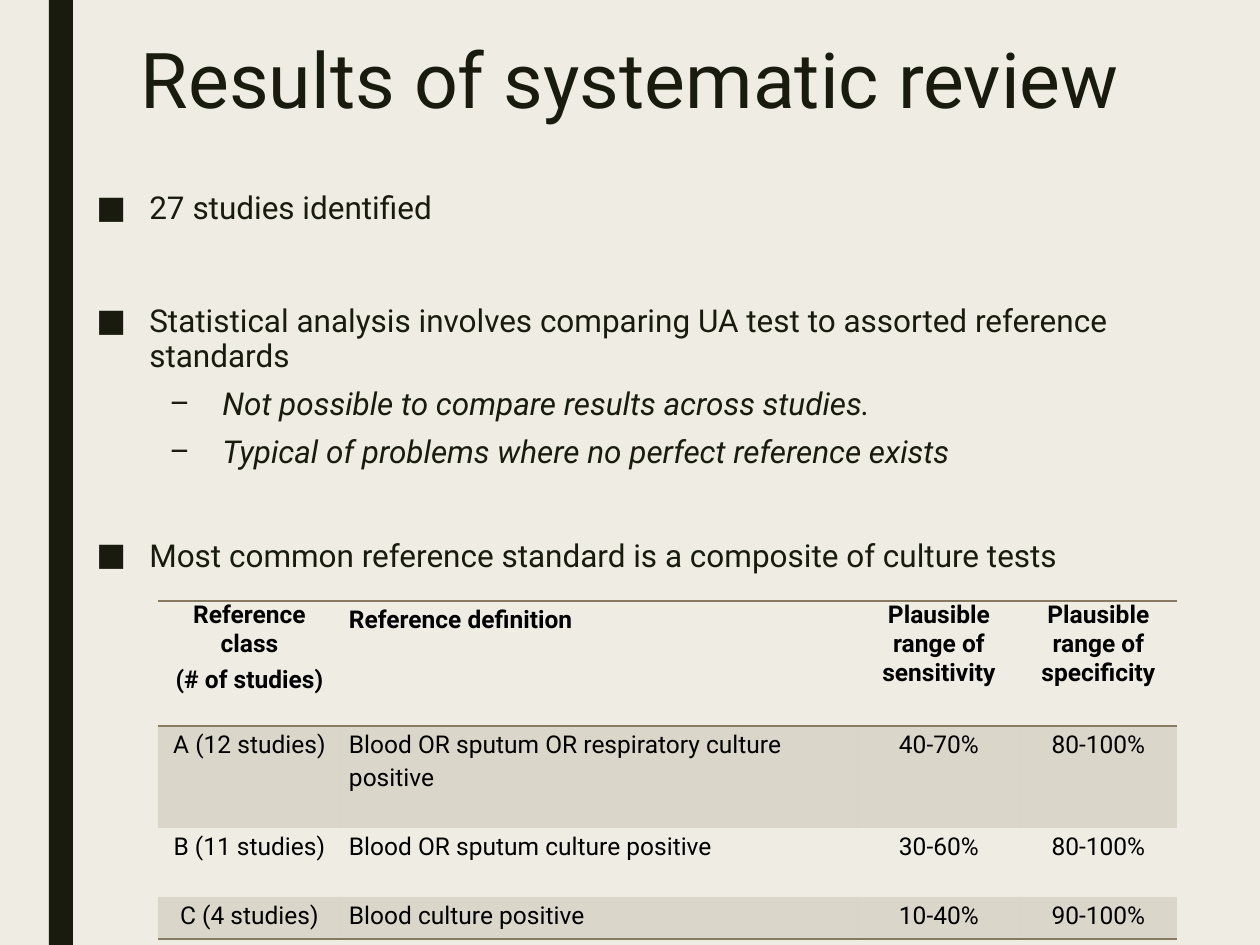
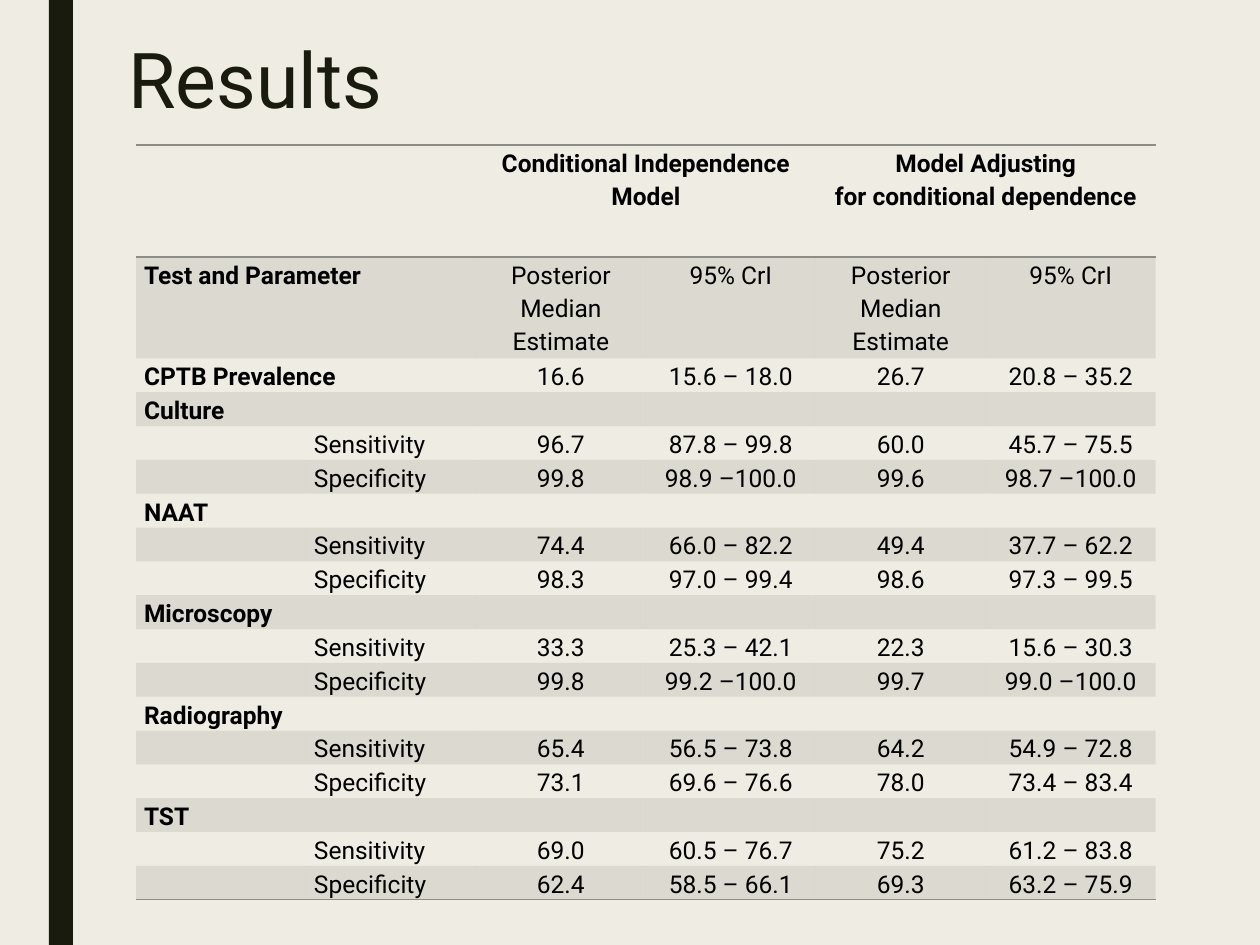
"""Build two slides on the results of a systematic review of diagnostic tests."""
from lxml import etree
from pptx import Presentation
from pptx import util as u
from pptx.dml.color import RGBColor
from pptx.enum import shapes, text
from pptx.oxml.ns import qn

PX = 914400 / 126
FONT = "Roboto"
COLORS = {
    "paper": "EFEDE3",
    "ink": "191B0E",
    "black": "000000",
    "tan": "897B61",
    "grey": "8C8D86",
}
PLAIN_TABLE = "{2D5ABB26-0587-4C30-8999-92F81FD0307C}"
LEFT, CENTER = text.PP_ALIGN.LEFT, text.PP_ALIGN.CENTER
TOP, MIDDLE = text.MSO_ANCHOR.TOP, text.MSO_ANCHOR.MIDDLE

FINDINGS = [
    ("27 studies identified", 0, 10),
    ("Statistical analysis involves comparing UA test to assorted reference standards", 0, 42),
    ("Not possible to compare results across studies.", 1, 5),
    ("Typical of problems where no perfect reference exists", 1, 5),
    ("Most common reference standard is a composite of culture tests", 0, 37),
]
REFERENCE_HEADS = [
    ["Reference class", "(# of studies)"],
    ["Reference definition"],
    ["Plausible range of sensitivity"],
    ["Plausible range of specificity"],
]
REFERENCE_CLASSES = [
    ("A (12 studies)", "Blood OR sputum OR respiratory culture positive", "40-70%", "80-100%"),
    ("B (11 studies)", "Blood OR sputum culture positive", "30-60%", "80-100%"),
    ("C (4 studies)", "Blood culture positive", "10-40%", "90-100%"),
]
MODELS = ["Conditional Independence Model", "Model Adjusting\vfor conditional dependence"]
MEASURES = ["Posterior Median Estimate", "95% CrI"]
PREVALENCE = ("16.6", "15.6 – 18.0", "26.7", "20.8 – 35.2")
ACCURACY = {
    "Culture": [("96.7", "87.8 – 99.8", "60.0", "45.7 – 75.5"),
                ("99.8", "98.9 –100.0", "99.6", "98.7 –100.0")],
    "NAAT": [("74.4", "66.0 – 82.2", "49.4", "37.7 – 62.2"),
             ("98.3", "97.0 – 99.4", "98.6", "97.3 – 99.5")],
    "Microscopy": [("33.3", "25.3 – 42.1", "22.3", "15.6 – 30.3"),
                   ("99.8", "99.2 –100.0", "99.7", "99.0 –100.0")],
    "Radiography": [("65.4", "56.5 – 73.8", "64.2", "54.9 – 72.8"),
                    ("73.1", "69.6 – 76.6", "78.0", "73.4 – 83.4")],
    "TST": [("69.0", "60.5 – 76.7", "75.2", "61.2 – 83.8"),
            ("62.4", "58.5 – 66.1", "69.3", "63.2 – 75.9")],
}


def px(length):
    """Turn px into EMU."""
    return u.Emu(round(length * PX))


def rgb(name):
    """Return the named colour."""
    return RGBColor.from_string(COLORS[name])


def write(frame, content, size=14, color="black", bold=False, italic=False,
          align=LEFT, spacing=1.0, before=0, after=0):
    """Add one formatted paragraph to a text frame and return it."""
    last = frame.paragraphs[-1]
    paragraph = frame.add_paragraph() if last.runs else last
    paragraph.text = content
    paragraph.alignment = align
    paragraph.line_spacing = spacing
    paragraph.space_before, paragraph.space_after = u.Pt(before), u.Pt(after)
    for run in paragraph.runs:
        run.font.name, run.font.size = FONT, u.Pt(size)
        run.font.bold, run.font.italic = bold, italic
        run.font.color.rgb = rgb(color)
    return paragraph


def add_bullet(paragraph, mark, indent, hang):
    """Give a paragraph a hanging bullet."""
    props = paragraph._p.get_or_add_pPr()
    props.set("marL", str(px(indent)))
    props.set("indent", str(-px(hang)))
    etree.SubElement(props, qn("a:buFont"), typeface=FONT)
    etree.SubElement(props, qn("a:buChar"), char=mark)


def add_frame(slide, box):
    """Add a wrapping text box and return its text frame."""
    frame = slide.shapes.add_textbox(*map(px, box)).text_frame
    frame.word_wrap = True
    return frame


def add_base(deck, title, box, align):
    """Add a slide with the background, side band and title."""
    slide = deck.slides.add_slide(deck.slide_layouts[6])
    slide.background.fill.solid()
    slide.background.fill.fore_color.rgb = rgb("paper")
    band = slide.shapes.add_shape(shapes.MSO_SHAPE.RECTANGLE, px(49), 0, px(24), px(945))
    band.shadow.inherit = False
    band.fill.solid()
    band.fill.fore_color.rgb = rgb("ink")
    band.line.fill.background()
    write(add_frame(slide, box), title, size=44, color="ink", align=align, spacing=0.89)
    return slide


def add_findings(slide, box):
    """Add the bulleted findings in the given box."""
    frame = add_frame(slide, box)
    for content, level, before in FINDINGS:
        paragraph = write(frame, content, size=18, color="ink", italic=level == 1,
                          spacing=0.94, before=before, after=2)
        paragraph.level = level
        add_bullet(paragraph, "■–"[level], (53, 126)[level], 53)


def style_cell(cell, color, shaded, edges):
    """Set a cell's margins, ruled edges, tint and empty-text size."""
    cell.margin_left = cell.margin_right = px(8)
    cell.margin_top = cell.margin_bottom = 0
    props = cell._tc.get_or_add_tcPr()
    for edge in edges:
        line = etree.SubElement(props, qn(f"a:ln{edge}"), w=str(u.Pt(1)))
        fill = etree.SubElement(line, qn("a:solidFill"))
        etree.SubElement(fill, qn("a:srgbClr"), val=COLORS[color])
    if shaded:
        cell.fill.solid()
        cell.fill.fore_color.rgb = rgb(color)
        tint = props.find(f"{qn('a:solidFill')}/{qn('a:srgbClr')}")
        etree.SubElement(tint, qn("a:alpha"), val="20000")
    else:
        cell.fill.background()
    etree.SubElement(cell.text_frame.paragraphs[0]._p, qn("a:endParaRPr"), sz="1400")


def add_grid(slide, origin, widths, heights, color):
    """Add a table with a ruled header, a ruled foot and tinted odd rows."""
    size = (sum(widths), sum(heights))
    holder = slide.shapes.add_table(len(heights), len(widths), *map(px, (*origin, *size)))
    next(holder.element.iter(qn("a:tableStyleId"))).text = PLAIN_TABLE
    grid = holder.table
    grid.first_row = grid.horz_banding = False
    for column, width in zip(grid.columns, widths):
        column.width = px(width)
    for row, height in zip(grid.rows, heights):
        row.height = px(height)
    edges = {0: "TB", len(heights) - 1: "B"}
    for r in range(len(heights)):
        for c in range(len(widths)):
            style_cell(grid.cell(r, c), color, r % 2 == 1, edges.get(r, ""))
    return grid


def add_reference_table(slide, origin):
    """Add the table of reference classes at the given origin."""
    grid = add_grid(slide, origin, (183, 517, 162, 157), (125, 102, 69, 42), "tan")
    aligns = (CENTER, LEFT, CENTER, CENTER)
    for c, (lines, align) in enumerate(zip(REFERENCE_HEADS, aligns)):
        for line in lines:
            write(grid.cell(0, c).text_frame, line, bold=True, align=align,
                  spacing=1.15 if align == LEFT else 1.0, before=2, after=2)
    for r, values in enumerate(REFERENCE_CLASSES, 1):
        for c, (value, align) in enumerate(zip(values, aligns)):
            write(grid.cell(r, c).text_frame, value, align=align,
                  spacing=1.15, before=2, after=2)


def add_accuracy_table(slide, origin):
    """Add the table of model estimates at the given origin."""
    rows = [("CPTB Prevalence", True, PREVALENCE)]
    for test, (sensitivity, specificity) in ACCURACY.items():
        rows += [(test, True, ()), ("Sensitivity", False, sensitivity),
                 ("Specificity", False, specificity)]
    heights = [112, 101] + [540 / len(rows)] * len(rows)
    grid = add_grid(slide, origin, [170] * 6, heights, "grey")

    def put(r, c, content, anchor=MIDDLE, **style):
        """Write one cell of the table."""
        grid.cell(r, c).vertical_anchor = anchor
        write(grid.cell(r, c).text_frame, content, spacing=1.15, after=6, **style)

    for c in (0, 2, 4):
        grid.cell(0, c).merge(grid.cell(0, c + 1))
    for c, model in zip((2, 4), MODELS):
        put(0, c, model, TOP, bold=True, align=CENTER)
    grid.cell(1, 0).merge(grid.cell(1, 1))
    put(1, 0, "Test and Parameter", TOP, bold=True)
    for c, measure in enumerate(MEASURES * 2, 2):
        put(1, c, measure, TOP, align=CENTER)
    for r, (label, heading, values) in enumerate(rows, 2):
        if heading:
            grid.cell(r, 0).merge(grid.cell(r, 1))
        put(r, 0 if heading else 1, label, bold=heading)
        for c, value in enumerate(values, 2):
            put(r, c, value, align=CENTER)


def main():
    """Build and save the deck."""
    deck = Presentation()
    deck.slide_width, deck.slide_height = px(1260), px(945)
    review = add_base(deck, "Results of systematic review", (120, 37, 1021, 186), CENTER)
    add_findings(review, (84, 185, 1134, 362))
    add_reference_table(review, (158, 601))
    results = add_base(deck, "Results", (116, 37, 1021, 186), LEFT)
    add_accuracy_table(results, (136, 145))
    deck.save("out.pptx")


if __name__ == "__main__":
    main()
